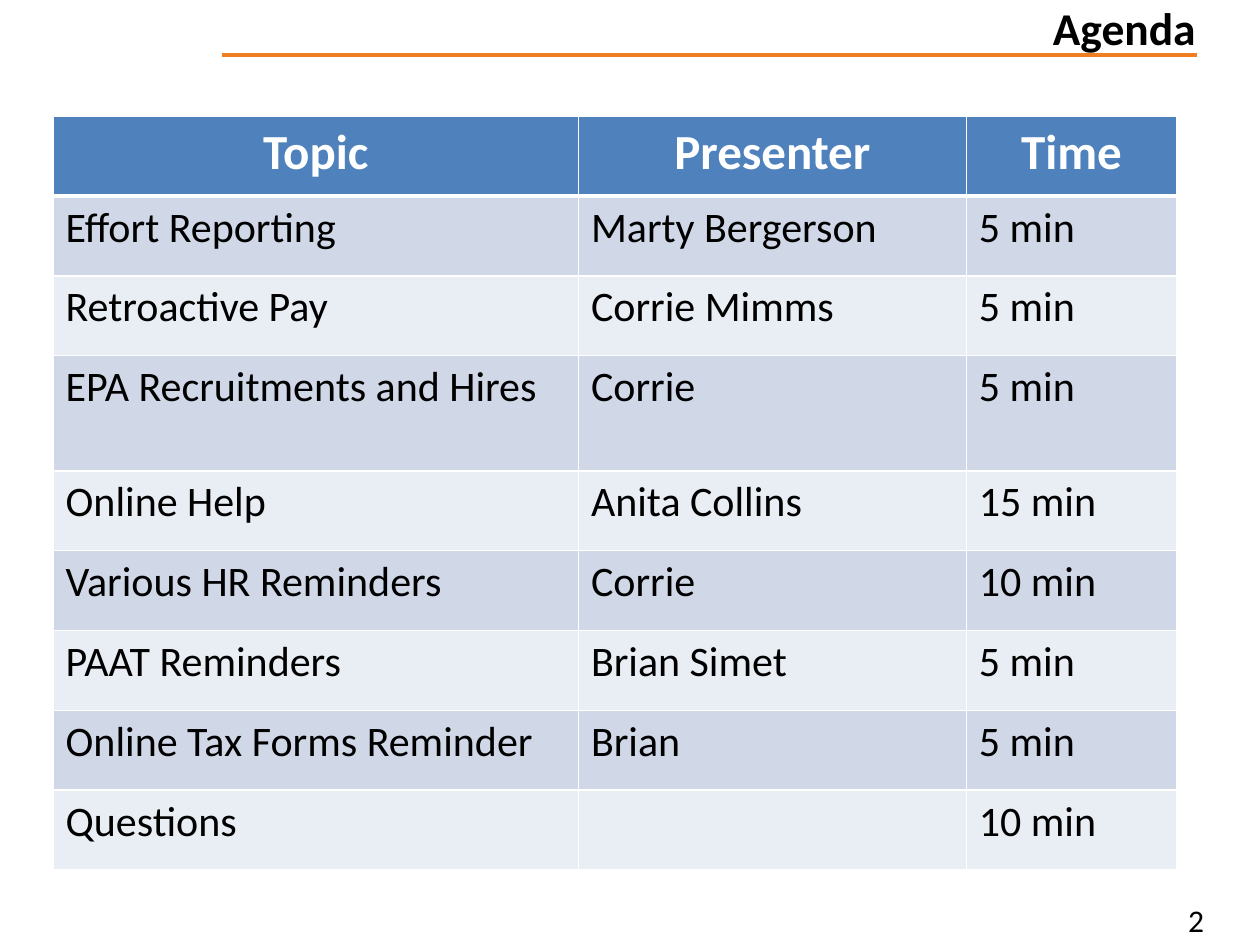
import pptx
import pptx.dml.color
import pptx.enum.shapes
import pptx.enum.text
import pptx.oxml
import pptx.oxml.ns
import pptx.util
from lxml import etree
from pptx.util import Cm

FONT = "Calibri"
ALIGN = pptx.enum.text.PP_ALIGN
BLACK, WHITE, ORANGE = "000000", "FFFFFF", "F17E1F"
HEADER_FILL = "4F81BD"
BAND_FILLS = ("D0D8E8", "E9EDF4")
COLUMN_WIDTHS = (10.59, 7.82, 4.24)
ROW_HEIGHT, TALL_ROW_HEIGHT = 1.61, 2.32
TALL_ROW = 3
AGENDA = [
    ("Topic", "Presenter", "Time"),
    ("Effort Reporting", "Marty Bergerson", "5 min"),
    ("Retroactive Pay", "Corrie Mimms", "5 min"),
    ("EPA Recruitments and Hires", "Corrie", "5 min"),
    ("Online Help", "Anita Collins", "15 min"),
    ("Various HR Reminders", "Corrie", "10 min"),
    ("PAAT Reminders", "Brian Simet", "5 min"),
    ("Online Tax Forms Reminder", "Brian", "5 min"),
    ("Questions", "", "10 min"),
]


def color(value):
    return pptx.dml.color.RGBColor.from_string(value)


def write(paragraph, text, size, text_color=BLACK, bold=False, align=ALIGN.LEFT):
    paragraph.text = text
    paragraph.alignment = align
    font = paragraph.font
    font.name, font.size, font.bold = FONT, pptx.util.Pt(size), bold
    font.color.rgb = color(text_color)


def add_text(slide, left, top, width, height, text, size, **style):
    box = slide.shapes.add_textbox(Cm(left), Cm(top), Cm(width), Cm(height))
    box.text_frame.word_wrap = True
    write(box.text_frame.paragraphs[0], text, size, **style)


def add_rule(slide, left, right, y):
    rule = slide.shapes.add_connector(
        pptx.enum.shapes.MSO_CONNECTOR.STRAIGHT, Cm(left), Cm(y), Cm(right), Cm(y))
    rule.line.color.rgb = color(ORANGE)
    rule.line.width = pptx.util.Pt(2)
    etree.SubElement(rule._element.spPr, pptx.oxml.ns.qn("a:effectLst"))


def add_panel(slide, left, top, width, height):
    panel = slide.shapes.add_shape(
        pptx.enum.shapes.MSO_SHAPE.RECTANGLE, Cm(left), Cm(top), Cm(width), Cm(height))
    panel.shadow.inherit = False
    panel.fill.solid()
    panel.fill.fore_color.rgb = color(WHITE)
    panel.line.color.rgb = color(WHITE)
    panel.line.width = pptx.util.Pt(2)


def set_borders(cell, bottom_width):
    """Draw white borders; they must come before the fill in the cell properties."""
    properties = cell._tc.get_or_add_tcPr()
    widths = {"lnL": 1, "lnR": 1, "lnT": 1, "lnB": bottom_width}
    for position, (side, width) in enumerate(widths.items()):
        properties.insert(position, pptx.oxml.parse_xml(
            f'<a:{side} {pptx.oxml.ns.nsdecls("a")} w="{pptx.util.Pt(width)}">'
            f'<a:solidFill><a:srgbClr val="{WHITE}"/></a:solidFill></a:{side}>'))


def add_agenda_table(slide, left, top):
    heights = [TALL_ROW_HEIGHT if i == TALL_ROW else ROW_HEIGHT for i in range(len(AGENDA))]
    table = slide.shapes.add_table(
        len(AGENDA), len(COLUMN_WIDTHS), Cm(left), Cm(top),
        Cm(sum(COLUMN_WIDTHS)), Cm(sum(heights))).table
    for column, width in zip(table.columns, COLUMN_WIDTHS):
        column.width = Cm(width)
    for i, (row, height, texts) in enumerate(zip(table.rows, heights, AGENDA)):
        row.height = Cm(height)
        is_header = i == 0
        for cell, text in zip(row.cells, texts):
            cell.fill.solid()
            cell.fill.fore_color.rgb = color(HEADER_FILL if is_header else BAND_FILLS[(i - 1) % 2])
            set_borders(cell, 3 if is_header else 1)
            paragraph = cell.text_frame.paragraphs[0]
            if is_header:
                write(paragraph, text, 28, WHITE, True, ALIGN.CENTER)
            else:
                write(paragraph, text, 24)


def main():
    presentation = pptx.Presentation()
    presentation.slide_width, presentation.slide_height = Cm(25.4), Cm(19.05)
    slide = presentation.slides.add_slide(presentation.slide_layouts[6])
    add_rule(slide, 0.76, 24.13, 1.11)
    add_text(slide, 23.7, 18.03, 1.68, 1.02, "2", 18)
    add_panel(slide, 0.43, 0.25, 4.01, 1.7)
    add_text(slide, 10.59, -0.13, 13.77, 1.47, "Agenda", 26, bold=True, align=ALIGN.RIGHT)
    add_agenda_table(slide, 1.07, 2.34)
    presentation.save("out.pptx")


if __name__ == "__main__":
    main()
